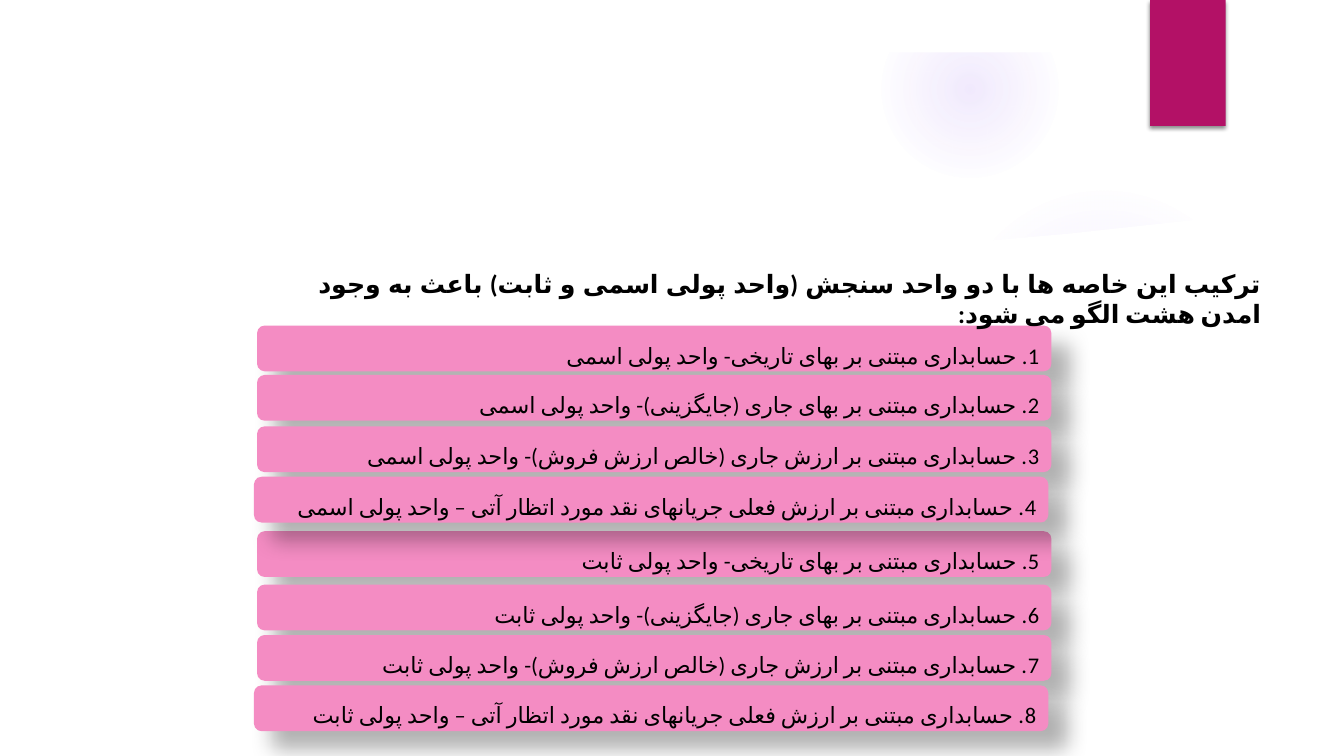
from lxml import etree
from pptx import Presentation
from pptx.dml.color import RGBColor
from pptx.enum.lang import MSO_LANGUAGE_ID
from pptx.enum.shapes import MSO_SHAPE
from pptx.enum.text import MSO_ANCHOR, PP_ALIGN
from pptx.oxml import parse_xml
from pptx.oxml.ns import nsdecls, qn
from pptx.util import Pt

RECT, ROUND, OVAL = MSO_SHAPE.RECTANGLE, MSO_SHAPE.ROUNDED_RECTANGLE, MSO_SHAPE.OVAL
MIDDLE = MSO_ANCHOR.MIDDLE
RIGHT, JUSTIFY = PP_ALIGN.RIGHT, PP_ALIGN.JUSTIFY
FARSI = MSO_LANGUAGE_ID.FARSI

FONT = "Calibri"
COLORS = {"paper": "FFFFFF", "tab": "B31166", "bar": "F48CC3",
          "glow": "9B6BF2", "ink": "000000"}
WIDTH, HEIGHT = 960, 540

TITLE = ("ترکیب این خاصه ها با دو واحد سنجش (واحد پولی اسمی و ثابت) "
         "باعث به وجود امدن هشت الگو می شود:")
MODELS = [
    "حسابداری مبتنی بر بهای تاریخی- واحد پولی",
    "حسابداری مبتنی بر بهای جاری (جایگزینی)- واحد پولی",
    "حسابداری مبتنی بر ارزش جاری (خالص ارزش فروش)- واحد پولی",
    "حسابداری مبتنی بر ارزش فعلی جریانهای نقد مورد اتظار آتی – واحد پولی",
]
LEFTS = [183.6, 183.6, 183.6, 181.4]
# Each unit: its name and the tops of its four bars
UNITS = [("اسمی", [232.56, 267.84, 304.56, 340.56]),
         ("ثابت", [379.44, 417.6, 453.6, 489.6])]

# Upper edge of the white panel that covers the lower glow
CURVE = [(36, 147), (135, 159), (260, 170), (437, 178), (566, 178),
         (683, 174), (763, 167), (864, 156), (924, 147)]


def paint(shape, color):
    shape.shadow.inherit = False
    shape.fill.solid()
    shape.fill.fore_color.rgb = RGBColor.from_string(COLORS[color])
    shape.line.fill.background()


def add_block(slide, kind, box, color):
    shape = slide.shapes.add_shape(kind, *map(Pt, box))
    paint(shape, color)
    return shape


def add_shadow(shape, alpha, blur, dist, angle):
    """Give an outer shadow: alpha in percent, lengths in points, angle in degrees."""
    effects = shape._element.spPr.find(qn("a:effectLst"))
    outer = etree.SubElement(effects, qn("a:outerShdw"), blurRad=str(Pt(blur)),
                             dist=str(Pt(dist)), dir=str(angle * 60000),
                             algn="tl", rotWithShape="0")
    tint = etree.SubElement(outer, qn("a:srgbClr"), val=COLORS["ink"])
    etree.SubElement(tint, qn("a:alpha"), val=str(alpha * 1000))


def add_glow(slide, box, stops):
    """Draw a radial glow from (position, alpha) stops in percent."""
    shape = add_block(slide, OVAL, box, "glow")
    marks = "".join(
        f'<a:gs pos="{pos * 1000}"><a:srgbClr val="{COLORS["glow"]}">'
        f'<a:alpha val="{alpha * 1000}"/></a:srgbClr></a:gs>'
        for pos, alpha in stops)
    grad = parse_xml(
        f'<a:gradFill {nsdecls("a")} rotWithShape="1"><a:gsLst>{marks}</a:gsLst>'
        '<a:path path="circle"><a:fillToRect l="50000" t="50000" r="50000" b="50000"/>'
        '</a:path></a:gradFill>')
    props = shape._element.spPr
    props.replace(props.find(qn("a:solidFill")), grad)


def add_panel(slide):
    start, *rest = CURVE
    path = slide.shapes.build_freeform(Pt(start[0]), Pt(start[1]))
    corners = rest + [(924, 504), (36, 504)]
    path.add_line_segments([(Pt(x), Pt(y)) for x, y in corners], close=True)
    paint(path.convert_to_shape(), "paper")


def write(frame, text, size, align, bold=False):
    """Write one right-to-left paragraph."""
    frame.word_wrap = True
    para = frame.paragraphs[0]
    para.alignment = align
    para._p.get_or_add_pPr().set("rtl", "1")
    run = para.add_run()
    run.text = text
    run.font.name, run.font.size, run.font.bold = FONT, Pt(size), bold
    run.font.language_id = FARSI
    run.font.color.rgb = RGBColor.from_string(COLORS["ink"])
    etree.SubElement(run._r.rPr, qn("a:cs"), typeface=FONT)
    return para


def add_bar(slide, left, top, text):
    bar = add_block(slide, ROUND, (left, top, 567.4, 32.7), "bar")
    add_shadow(bar, 30, 15, 18, 45)
    bar.text_frame.vertical_anchor = MIDDLE
    write(bar.text_frame, text, 16, RIGHT).line_spacing = 1.5


def main():
    deck = Presentation()
    deck.slide_width, deck.slide_height = Pt(WIDTH), Pt(HEIGHT)
    slide = deck.slides.add_slide(deck.slide_layouts[6])

    add_glow(slide, (677.5, 131.8, 221.8, 221.8), [(0, 7), (36, 6), (69, 0)])
    add_glow(slide, (630, 0.7, 126, 126), [(0, 14), (36, 7), (73, 0)])
    add_panel(slide)
    add_block(slide, RECT, (0, 0, WIDTH, 37.4), "paper")
    tab = add_block(slide, RECT, (821.5, 0, 54, 90), "tab")
    add_shadow(tab, 45, 3, 2, 90)

    for row, model in enumerate(MODELS):
        for group, (unit, tops) in enumerate(UNITS):
            number = row + 1 + group * len(MODELS)
            add_bar(slide, LEFTS[row], tops[row], f"{number}. {model} {unit}")

    title = slide.shapes.add_textbox(Pt(220.3), Pt(187.9), Pt(687.6), Pt(28.8))
    write(title.text_frame, TITLE, 18, JUSTIFY, bold=True)
    deck.save("out.pptx")


if __name__ == "__main__":
    main()
